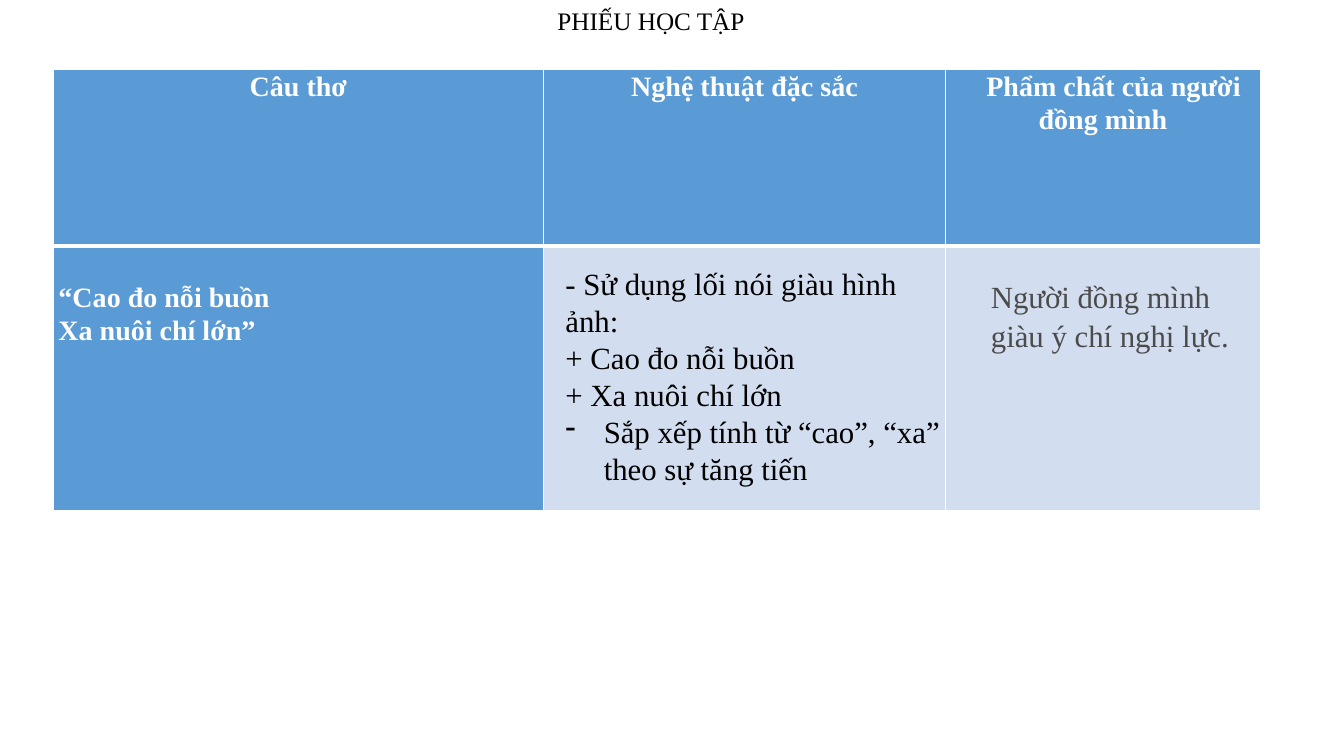
from lxml.etree import SubElement
from pptx import Presentation
from pptx.dml.color import RGBColor
from pptx.enum.text import MSO_AUTO_SIZE as AUTO, PP_ALIGN as ALIGN
from pptx.oxml.ns import qn
from pptx.util import Inches, Pt

BLACK = RGBColor(0x00, 0x00, 0x00)
WHITE = RGBColor(0xFF, 0xFF, 0xFF)
GREY = RGBColor(0x4C, 0x4B, 0x4B)
BLUE = RGBColor(0x5B, 0x9B, 0xD5)
PALE = RGBColor(0xD2, 0xDE, 0xEF)


class Worksheet:
    font = "Times New Roman"
    header_format = dict(alignment=ALIGN.CENTER, line_spacing=1.07)
    verse_format = dict(line_spacing=1.07)
    label_font = dict(size=20, color=WHITE, bold=True)

    def __init__(self, slide):
        self.s = slide

    def add_lines(self, tf, lines, size, color, bold=False, **para_format):
        for i, line in enumerate(lines):
            p = tf.paragraphs[0] if i == 0 else tf.add_paragraph()
            for name, value in para_format.items():
                setattr(p, name, value)
            r = p.add_run()
            r.text = line
            for name, value in dict(name=self.font, size=Pt(size), bold=bold).items():
                setattr(r.font, name, value)
            r.font.color.rgb = color

    def indent(self, p, left, first, bullet=None):
        pPr = p._p.get_or_add_pPr()
        pPr.set("marL", str(Inches(left)))
        pPr.set("indent", str(Inches(first)))
        if bullet:
            SubElement(pPr, qn("a:buFontTx"))
            SubElement(pPr, qn("a:buChar"), char=bullet)

    def text(self, box, lines, size, color, wrap=True, **para_format):
        tf = self.s.shapes.add_textbox(*map(Inches, box)).text_frame
        tf.word_wrap = wrap
        tf.auto_size = AUTO.SHAPE_TO_FIT_TEXT
        self.add_lines(tf, lines, size, color, **para_format)
        return tf

    def border(self, cell, **widths):
        tcPr = cell._tc.get_or_add_tcPr()
        for side in "LRTB":
            ln = SubElement(tcPr, qn(f"a:ln{side}"), w=str(Pt(widths.get(side, 1))))
            fill = SubElement(ln, qn("a:solidFill"))
            SubElement(fill, qn("a:srgbClr"), val=str(WHITE))

    def table(self, box, cols, rows):
        frame = self.s.shapes.add_table(len(rows), len(cols), *map(Inches, box))
        table = frame.table
        for col, width in zip(table.columns, cols):
            col.width = Inches(width)
        for row, height in zip(table.rows, rows):
            row.height = Inches(height)
        for r in range(len(rows)):
            for c in range(len(cols)):
                cell = table.cell(r, c)
                self.border(cell, **({"B": 3} if r == 0 else {"T": 3}))
                cell.fill.solid()
                cell.fill.fore_color.rgb = BLUE if r == 0 or c == 0 else PALE
                cell.margin_left = cell.margin_right = Inches(0.05)
                cell.margin_top = cell.margin_bottom = 0
        return table


def main():
    prs = Presentation()
    prs.slide_width, prs.slide_height = Inches(13.33), Inches(7.5)
    sheet = Worksheet(prs.slides.add_slide(prs.slide_layouts[6]))

    # Title
    sheet.text((5.43, 0, 2.08, 0.4), ["PHIẾU HỌC TẬP"], 18, BLACK, wrap=False)

    # Table with its headings and the verse
    table = sheet.table((0.53, 0.69, 11.97, 4.38), (4.86, 3.99, 3.12), (1.75, 2.63))
    headings = ["Câu thơ", "Nghệ thuật đặc sắc", "Phẩm chất của người đồng mình"]
    for c, heading in enumerate(headings):
        sheet.add_lines(table.cell(0, c).text_frame, [heading],
                        **sheet.label_font, **sheet.header_format)
    sheet.indent(table.cell(0, 2).text_frame.paragraphs[0], 0, 0.21)
    verse = table.cell(1, 0)
    verse.margin_top = Inches(0.34)
    sheet.add_lines(verse.text_frame, ["“Cao đo nỗi buồn", "Xa nuôi chí lớn”"],
                    **sheet.label_font, **sheet.verse_format)

    # Answers laid over the pale cells
    art = sheet.text((5.51, 2.58, 4.01, 2.32), [
        "- Sử dụng lối nói giàu hình ảnh:",
        "+ Cao đo nỗi buồn",
        "+ Xa nuôi chí lớn",
        "Sắp xếp tính từ “cao”, “xa” theo sự tăng tiến",
    ], 22, BLACK)
    sheet.indent(art.paragraphs[-1], 0.38, -0.38, bullet="-")
    sheet.text((9.73, 2.68, 2.76, 1.29), ["Người đồng mình giàu ý chí nghị lực."],
               22, GREY, line_spacing=1.07)

    prs.save("out.pptx")


if __name__ == "__main__":
    main()
